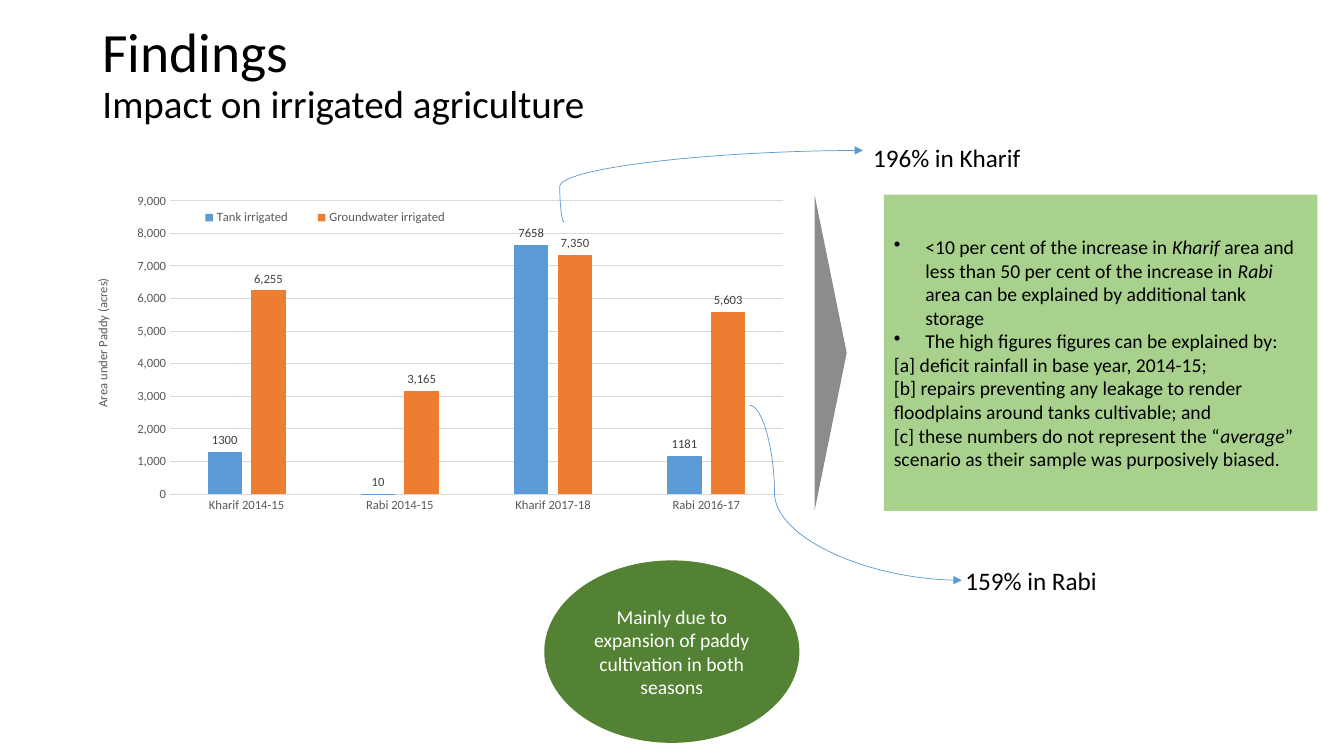
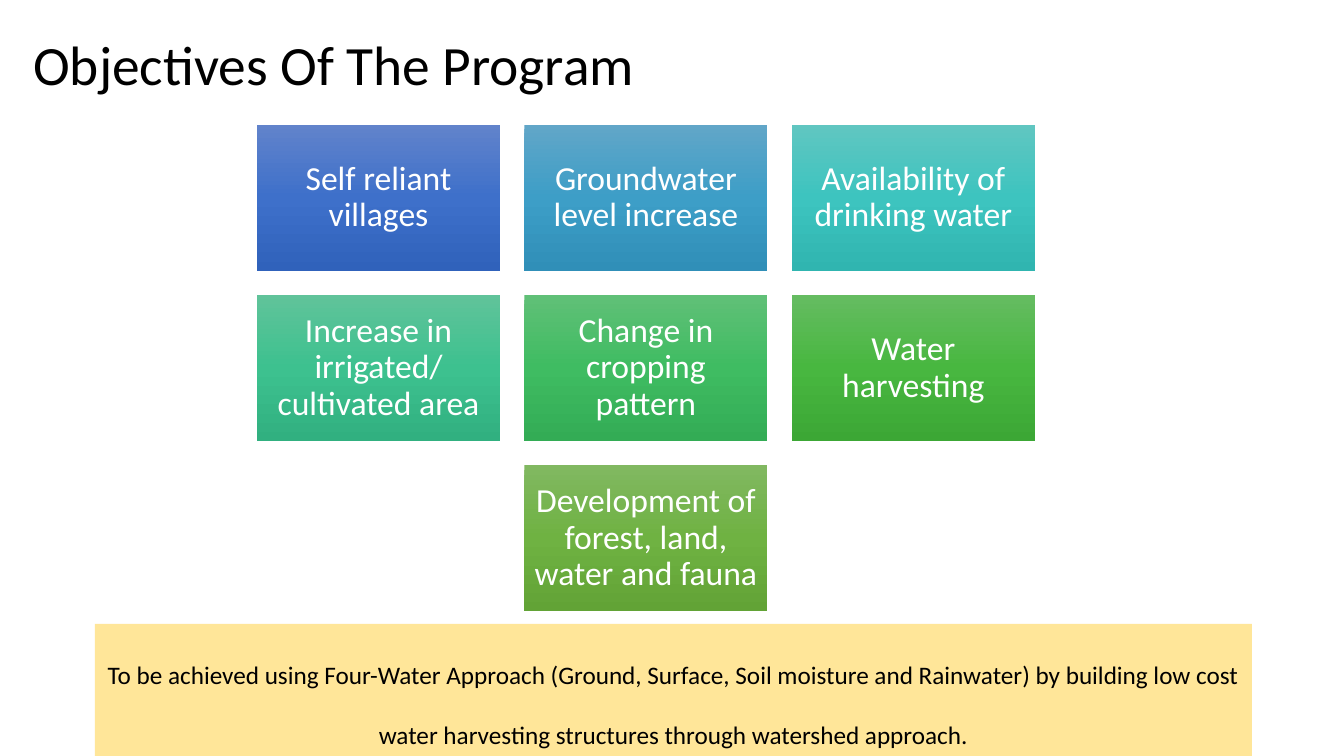
"""Build two slides on a watershed program: findings and objectives."""
from copy import deepcopy
from dataclasses import dataclass
from typing import Any, NamedTuple

from lxml import etree
from pptx import Presentation
from pptx.chart.data import CategoryChartData
from pptx.dml.color import RGBColor
from pptx.enum.chart import XL_CHART_TYPE, XL_LABEL_POSITION, XL_LEGEND_POSITION, XL_TICK_MARK
from pptx.enum.shapes import MSO_CONNECTOR, MSO_SHAPE
from pptx.enum.text import MSO_ANCHOR, MSO_AUTO_SIZE, PP_ALIGN
from pptx.oxml.ns import qn
from pptx.util import Pt

COLUMNS = XL_CHART_TYPE.COLUMN_CLUSTERED
OUTSIDE_END = XL_LABEL_POSITION.OUTSIDE_END
LEGEND_BOTTOM = XL_LEGEND_POSITION.BOTTOM
NO_TICK = XL_TICK_MARK.NONE
CURVE = MSO_CONNECTOR.CURVE
RECTANGLE, ELLIPSE, ARROWHEAD = MSO_SHAPE.RECTANGLE, MSO_SHAPE.OVAL, MSO_SHAPE.PENTAGON
TOP, MIDDLE = MSO_ANCHOR.TOP, MSO_ANCHOR.MIDDLE
LEFT, CENTER = PP_ALIGN.LEFT, PP_ALIGN.CENTER
NO_AUTOFIT = MSO_AUTO_SIZE.NONE
TITLE_ONLY = 5


@dataclass(frozen=True)
class Theme:
    """Colours, font and type sizes shared by the slides."""

    font: str = "Calibri"
    black: str = "000000"
    white: str = "FFFFFF"
    blue: str = "5B9BD5"
    orange: str = "ED7D31"
    gray: str = "8C8C8C"
    grid: str = "D9D9D9"
    axis_text: str = "595959"
    label_text: str = "404040"
    light_green: str = "A9D18E"
    dark_green: str = "548235"
    yellow: str = "FFE699"
    title: float = 39.6
    subtitle: float = 27.9
    tile: float = 24
    note: float = 18
    body: float = 14
    chart: float = 9


THEME = Theme()


class Box(NamedTuple):
    """A frame in points."""

    left: float
    top: float
    width: float
    height: float

    def lengths(self) -> list[Pt]:
        """Return the four lengths for python-pptx."""
        return [Pt(value) for value in self]


@dataclass(frozen=True)
class Line:
    """A paragraph in which asterisks enclose italic words."""

    text: str
    size: float = THEME.body
    bullet: bool = False


@dataclass(frozen=True)
class TextStyle:
    """Layout of the text in a shape."""

    color: str = THEME.black
    alignment: Any = LEFT
    anchor: Any = MIDDLE
    spacing: float = 1.0
    margin: float = 3.6


@dataclass(frozen=True)
class Series:
    """A chart series with its colour and label format."""

    name: str
    values: tuple[int, ...]
    color: str
    label_format: str


@dataclass(frozen=True)
class Callout:
    """A curved arrow that leads to a caption."""

    start: tuple[float, float]
    end: tuple[float, float]
    bend: int
    caption: str
    box: Box


@dataclass(frozen=True)
class Tile:
    """An objective and its gradient colours."""

    text: str
    colors: tuple[str, str, str]


CATEGORIES = ("Kharif 2014-15", "Rabi 2014-15", "Kharif 2017-18", "Rabi 2016-17")
SERIES = (
    Series("Tank irrigated", (1300, 10, 7658, 1181), THEME.blue, "General"),
    Series("Groundwater irrigated", (6255, 3165, 7350, 5603), THEME.orange, "#,##0"),
)
CALLOUTS = (
    Callout((403, 159), (616.5, 107.5), -1500, "196% in Kharif", Box(616.5, 98, 153.5, 29)),
    Callout((535.5, 289.5), (687, 414.5), 11700, "159% in Rabi", Box(682.5, 400.5, 153.5, 29)),
)
EXPLANATION = (
    Line("<10 per cent of the increase in *Kharif *area and less than 50 per cent of the "
         "increase in *Rabi *area can be explained by additional tank storage", bullet=True),
    Line("The high figures figures can be explained by:", bullet=True),
    Line("[a] deficit rainfall in base year, 2014-15;"),
    Line("[b] repairs preventing any leakage to render floodplains around tanks cultivable; and"),
    Line("[c] these numbers do not represent the “*average*” scenario as their sample was "
         "purposively biased."),
)
TILES = (
    Tile("Self reliant villages", ("6183CB", "3E70CA", "3062BB")),
    Tile("Groundwater level increase", ("61A6C8", "3D9EC7", "308FB8")),
    Tile("Availability of drinking water", ("60C6C1", "3DC4BF", "30B5B0")),
    Tile("Increase in irrigated/ cultivated area", ("60C39A", "3DC18F", "31B080")),
    Tile("Change in cropping pattern", ("60C077", "3FBC62", "33AC55")),
    Tile("Water harvesting", ("65BC61", "48B740", "3CA735")),
    Tile("Development of forest, land, water and fauna", ("81B861", "6FB242", "62A336")),
)
TILE_COLUMNS = 3
FIRST_TILE = Box(183.6, 89.2, 173.6, 104.2)
TILE_GAP = 17.4


def apply(target: Any, values: dict[str, Any]) -> None:
    """Set each named attribute of the target."""
    for name, value in values.items():
        setattr(target, name, value)


def format_font(font: Any, size: float, color: str, italic: bool = False) -> None:
    """Give a font the theme typeface, a size and a colour."""
    apply(font, {"name": THEME.font, "size": Pt(size), "bold": False, "italic": italic})
    font.color.rgb = RGBColor.from_string(color)


def fill_solid(fill: Any, color: str) -> None:
    """Fill with one colour."""
    fill.solid()
    fill.fore_color.rgb = RGBColor.from_string(color)


def fill_gradient(shape: Any, colors: tuple[str, str, str]) -> None:
    """Fill a shape from top to bottom with three colours."""
    shape.fill.gradient()
    shape.fill.gradient_angle = 270
    stops = shape._element.spPr.find(".//" + qn("a:gsLst"))
    stops.insert(1, deepcopy(stops[0]))
    for index, (stop, color) in enumerate(zip(shape.fill.gradient_stops, colors)):
        stop.position = index / 2
        stop.color.rgb = RGBColor.from_string(color)


def write_text(shape: Any, lines: tuple[Line, ...], style: TextStyle) -> None:
    """Write paragraphs into a shape."""
    frame = shape.text_frame
    apply(frame, {"word_wrap": True, "auto_size": NO_AUTOFIT, "vertical_anchor": style.anchor,
                  "margin_left": Pt(7.2), "margin_right": Pt(7.2),
                  "margin_top": Pt(style.margin), "margin_bottom": Pt(style.margin)})
    for index, line in enumerate(lines):
        paragraph = frame.add_paragraph() if index else frame.paragraphs[0]
        apply(paragraph, {"alignment": style.alignment, "line_spacing": style.spacing})
        if line.bullet:
            properties = paragraph._p.get_or_add_pPr()
            properties.set("marL", str(Pt(22.5)))
            properties.set("indent", str(-Pt(22.5)))
            etree.SubElement(properties, qn("a:buChar")).set("char", "•")
        for position, piece in enumerate(line.text.split("*")):
            if piece:
                run = paragraph.add_run()
                run.text = piece
                format_font(run.font, line.size, style.color, position % 2 == 1)


def add_shape(slide: Any, kind: Any, box: Box, color: str | None = None) -> Any:
    """Add a preset shape without outline or shadow."""
    shape = slide.shapes.add_shape(kind, *box.lengths())
    shape.shadow.inherit = False
    shape.line.fill.background()
    if color:
        fill_solid(shape.fill, color)
    return shape


def add_title_slide(presentation: Any, box: Box, lines: tuple[Line, ...]) -> Any:
    """Add a title-only slide and format its title."""
    slide = presentation.slides.add_slide(presentation.slide_layouts[TITLE_ONLY])
    title = slide.shapes.title
    apply(title, dict(zip(("left", "top", "width", "height"), box.lengths())))
    write_text(title, lines, TextStyle(spacing=0.9))
    return slide


def add_callout(slide: Any, callout: Callout) -> None:
    """Draw a curved arrow and its caption."""
    ends = [Pt(value) for value in callout.start + callout.end]
    connector = slide.shapes.add_connector(CURVE, *ends)
    connector.line.width = Pt(0.5)
    connector.line.color.rgb = RGBColor.from_string(THEME.blue)
    properties = connector._element.spPr
    guides = properties.find(qn("a:prstGeom")).get_or_add_avLst()
    guide = etree.SubElement(guides, qn("a:gd"))
    guide.set("name", "adj1")
    guide.set("fmla", f"val {callout.bend}")
    etree.SubElement(properties.find(qn("a:ln")), qn("a:tailEnd")).set("type", "triangle")
    etree.SubElement(properties, qn("a:effectLst"))
    caption = slide.shapes.add_textbox(*callout.box.lengths())
    write_text(caption, (Line(callout.caption, THEME.note),), TextStyle(anchor=TOP))


def place_in_chart(element: Any, index: int, values: dict[str, Any]) -> None:
    """Give a chart part a manual layout."""
    for existing in element.findall(qn("c:layout")):
        element.remove(existing)
    layout = etree.Element(qn("c:layout"))
    element.insert(index, layout)
    manual = etree.SubElement(layout, qn("c:manualLayout"))
    for name, value in values.items():
        etree.SubElement(manual, qn(f"c:{name}")).set("val", str(value))


def add_area_chart(slide: Any, box: Box) -> None:
    """Add the column chart of paddy area by season."""
    data = CategoryChartData()
    data.categories = CATEGORIES
    for series in SERIES:
        data.add_series(series.name, series.values)
    chart = slide.shapes.add_chart(COLUMNS, *box.lengths(), data).chart
    apply(chart, {"has_title": False, "has_legend": True})
    format_font(chart.font, THEME.chart, THEME.black)
    apply(chart.legend, {"position": LEGEND_BOTTOM, "include_in_layout": False})
    format_font(chart.legend.font, THEME.chart, THEME.axis_text)

    plot = chart.plots[0]
    apply(plot, {"gap_width": 219, "overlap": -27, "vary_by_categories": False})
    for drawn, series in zip(plot.series, SERIES):
        fill_solid(drawn.format.fill, series.color)
        labels = drawn.data_labels
        apply(labels, {"show_value": True, "position": OUTSIDE_END,
                       "number_format": series.label_format, "number_format_is_linked": False})
        format_font(labels.font, THEME.chart, THEME.label_text)

    category_axis, value_axis = chart.category_axis, chart.value_axis
    for axis in (category_axis, value_axis):
        apply(axis, {"major_tick_mark": NO_TICK, "minor_tick_mark": NO_TICK})
        format_font(axis.tick_labels.font, THEME.chart, THEME.axis_text)
    apply(value_axis, {"minimum_scale": 0, "maximum_scale": 9000, "major_unit": 1000,
                       "has_major_gridlines": True, "has_title": True})
    apply(value_axis.tick_labels, {"number_format": "#,##0", "number_format_is_linked": False})
    value_axis.format.line.fill.background()
    for line in (category_axis.format.line, value_axis.major_gridlines.format.line):
        line.width = Pt(0.75)
        line.color.rgb = RGBColor.from_string(THEME.grid)
    run = value_axis.axis_title.text_frame.paragraphs[0].add_run()
    run.text = "Area under Paddy (acres)"
    format_font(run.font, THEME.chart, THEME.axis_text)

    edges = {"xMode": "edge", "yMode": "edge"}
    place_in_chart(chart._chartSpace.chart.plotArea, 0, {
        "layoutTarget": "inner", **edges, "x": 0.127, "y": 0.051, "w": 0.842, "h": 0.856})
    place_in_chart(chart.legend._element, 1, {**edges, "x": 0.14, "y": 0.06, "w": 0.4, "h": 0.08})
    place_in_chart(value_axis.axis_title._element, 1, {**edges, "x": 0.02, "y": 0.27})


def build_findings(presentation: Any) -> None:
    """Build the slide on irrigated agriculture."""
    slide = add_title_slide(presentation, Box(66, 18.7, 828, 71.3), (
        Line("Findings", THEME.title), Line("Impact on irrigated agriculture", THEME.subtitle)))
    add_area_chart(slide, Box(55.4, 131, 520, 244.8))
    arrowhead = add_shape(slide, ARROWHEAD, Box(581.8, 139, 23, 226), THEME.gray)
    arrowhead.adjustments[0] = 1.0
    panel = add_shape(slide, RECTANGLE, Box(631.4, 139, 309.6, 226), THEME.light_green)
    write_text(panel, EXPLANATION, TextStyle(margin=7.2))
    for callout in CALLOUTS:
        add_callout(slide, callout)
    reason = add_shape(slide, ELLIPSE, Box(388.8, 400.3, 182.2, 130.3), THEME.dark_green)
    write_text(reason, (Line("Mainly due to expansion of paddy cultivation in both seasons"),),
               TextStyle(color=THEME.white, alignment=CENTER, margin=7.2))


def build_objectives(presentation: Any) -> None:
    """Build the slide with the grid of objectives."""
    slide = add_title_slide(presentation, Box(16.6, 21.6, 928, 54),
                            (Line("Objectives Of The Program", THEME.title),))
    left, top, width, height = FIRST_TILE
    style = TextStyle(color=THEME.white, alignment=CENTER, spacing=0.9, margin=7.2)
    for index, tile in enumerate(TILES):
        row, column = divmod(index, TILE_COLUMNS)
        in_row = min(TILE_COLUMNS, len(TILES) - row * TILE_COLUMNS)
        offset = column + (TILE_COLUMNS - in_row) / 2
        box = Box(left + offset * (width + TILE_GAP), top + row * (height + TILE_GAP),
                  width, height)
        shape = add_shape(slide, RECTANGLE, box)
        fill_gradient(shape, tile.colors)
        write_text(shape, (Line(tile.text, THEME.tile),), style)
    banner = add_shape(slide, RECTANGLE, Box(67.7, 445.7, 826.6, 94.3), THEME.yellow)
    write_text(banner, (Line(
        "To be achieved using Four-Water Approach (Ground, Surface, Soil moisture and Rainwater) "
        "by building low cost water harvesting structures through watershed approach.",
        THEME.note),), TextStyle(alignment=CENTER, anchor=TOP, spacing=2.0))


def main() -> None:
    """Build and save the presentation."""
    presentation = Presentation()
    apply(presentation, {"slide_width": Pt(960), "slide_height": Pt(540)})
    build_findings(presentation)
    build_objectives(presentation)
    presentation.save("out.pptx")


if __name__ == "__main__":
    main()
